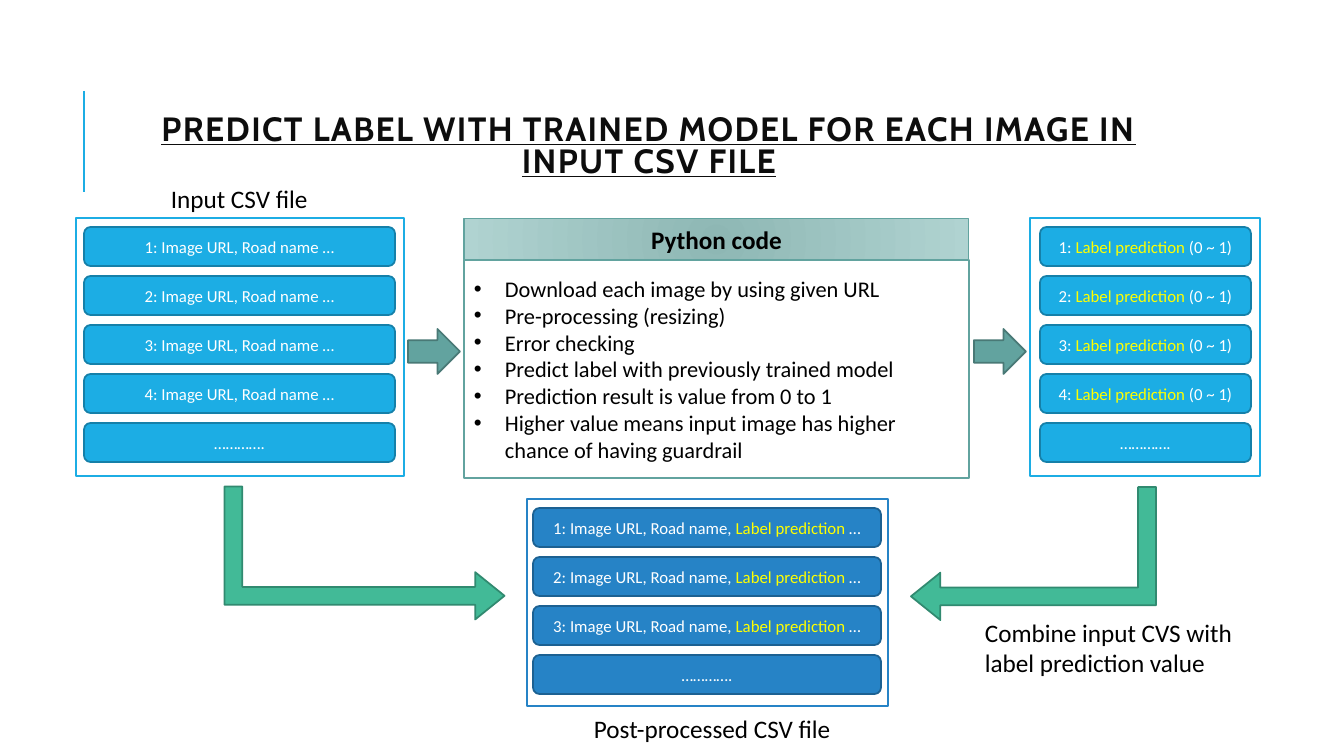
from lxml import etree
from pptx import Presentation
from pptx.dml.color import RGBColor
from pptx.enum.shapes import MSO_CONNECTOR, MSO_SHAPE
from pptx.enum.text import MSO_ANCHOR, PP_ALIGN
from pptx.oxml.ns import qn
from pptx.util import Pt

RECT, ROUND = MSO_SHAPE.RECTANGLE, MSO_SHAPE.ROUNDED_RECTANGLE
ARROW, BENT = MSO_SHAPE.RIGHT_ARROW, MSO_SHAPE.BENT_UP_ARROW
LINE = MSO_CONNECTOR.STRAIGHT
LEFT, CENTER, MIDDLE = PP_ALIGN.LEFT, PP_ALIGN.CENTER, MSO_ANCHOR.MIDDLE

SCALE = 914400 / 100.8
INDENT = 31
COLORS = {
    "white": "FFFFFF", "black": "000000", "ink": "0D0D0D", "yellow": "FFFF00",
    "sky": "1CADE4", "sky_edge": "1580A9", "blue": "2683C6", "blue_edge": "1C6192",
    "teal": "62A39F", "teal_edge": "497976", "green": "42BA97", "green_edge": "318A70",
    "head_in": "8EB7B4", "head_out": "B0D3D1",
}
PITCH = 49
ROW_H = 39
DOTS = [("………….", "white")]
LABEL = ("Label prediction ", "yellow")


def px(n):
    return round(n * SCALE)


def rgb(name):
    return RGBColor.from_string(COLORS[name])


def write(frame, paras, size=18, color="black", font="Calibri", bold=None,
          under=None, align=LEFT, space=None, track=None, bullet=False):
    """Fill a frame; a paragraph is a string or a list of (text, color) parts."""
    for i, parts in enumerate(paras):
        para = frame.paragraphs[0] if i == 0 else frame.add_paragraph()
        para.alignment = align
        if space:
            para.line_spacing = space
        if bullet:
            props = para._p.get_or_add_pPr()
            props.set("marL", str(px(INDENT)))
            props.set("indent", str(-px(INDENT)))
            etree.SubElement(props, qn("a:buFont")).set("typeface", "Arial")
            etree.SubElement(props, qn("a:buChar")).set("char", "•")
        if isinstance(parts, str):
            parts = [(parts, color)]
        for words, tint in parts:
            run = para.add_run()
            run.text = words
            run.font.size, run.font.name = Pt(size), font
            run.font.bold, run.font.underline = bold, under
            run.font.color.rgb = rgb(tint)
            if track:
                run.font._element.set("spc", str(track))


class Board:
    def __init__(self, slide):
        self.slide = slide
        self.shapes = slide.shapes

    def shape(self, kind, box, fill, edge, width=1.25):
        item = self.shapes.add_shape(kind, *map(px, box))
        item.shadow.inherit = False
        item.fill.solid()
        item.fill.fore_color.rgb = rgb(fill)
        item.line.color.rgb = rgb(edge)
        item.line.width = Pt(width)
        item.text_frame.word_wrap = True
        item.text_frame.vertical_anchor = MIDDLE
        return item

    def label(self, box, paras, wrap=False, **style):
        item = self.shapes.add_textbox(*map(px, box))
        item.text_frame.word_wrap = wrap
        write(item.text_frame, paras, **style)
        return item

    def rule(self, x, top, end, color):
        item = self.shapes.add_connector(LINE, px(x), px(top), px(x), px(end))
        item.line.color.rgb = rgb(color)
        item.line.width = Pt(1.5)
        etree.SubElement(item.element.spPr, qn("a:effectLst"))

    def table(self, box, left, wide, rows, tone):
        """A framed stack of record bars."""
        self.shape(RECT, box, "white", tone)
        for i, parts in enumerate(rows):
            bar = (left, box[1] + 9 + i * PITCH, wide, ROW_H)
            item = self.shape(ROUND, bar, tone, tone + "_edge")
            write(item.text_frame, [parts], size=12, align=CENTER)

    def glow(self, item, inner, outer):
        item.fill.gradient()
        for stop, name in zip(item.fill.gradient_stops, (inner, outer)):
            stop.color.rgb = rgb(name)
        grad = item.element.spPr.find(qn("a:gradFill"))
        grad.remove(grad.find(qn("a:lin")))
        path = etree.SubElement(grad, qn("a:path"))
        path.set("path", "circle")
        rect = etree.SubElement(path, qn("a:fillToRect"))
        for side in "ltrb":
            rect.set(side, "100000")

    def bend(self, box, flip=False):
        item = self.shape(BENT, box, "green", "green_edge")
        item.rotation = 90
        for i, ratio in enumerate((0.134, 0.178, 0.221)):
            item.adjustments[i] = ratio
        if flip:
            item.element.spPr.find(qn("a:xfrm")).set("flipV", "1")


def main():
    deck = Presentation()
    deck.slide_width, deck.slide_height = px(1344), px(756)
    board = Board(deck.slides.add_slide(deck.slide_layouts[6]))

    # Title
    board.rule(84, 91, 192, "sky")
    title = board.label(
        (113, 65, 1072, 165),
        ["PREDICT LABEL WITH TRAINED MODEL FOR EACH IMAGE IN INPUT CSV FILE"],
        wrap=True, size=24, color="ink", font="Cabin", bold=True, under=True,
        align=CENTER, space=0.8, track=100)
    title.text_frame.vertical_anchor = MIDDLE

    # Record tables
    source = [[(f"{n}: Image URL, Road name …", "white")] for n in range(1, 5)]
    scores = [[(f"{n}: ", "white"), LABEL, ("(0 ~ 1)", "white")] for n in range(1, 5)]
    merged = [[(f"{n}: Image URL, Road name, ", "white"), LABEL, ("…", "white")]
              for n in range(1, 4)]
    board.table((76, 218, 328, 258), 84, 311, source + [DOTS], "sky")
    board.table((1030, 218, 230, 258), 1040, 211, scores + [DOTS], "sky")
    board.table((527, 499, 361, 207), 533, 348, merged + [DOTS], "blue")

    # Python code panel
    body = board.shape(RECT, (464, 260, 505, 218), "white", "teal")
    write(body.text_frame, [
        "Download each image by using given URL",
        "Pre-processing (resizing)",
        "Error checking",
        "Predict label with previously trained model",
        "Prediction result is value from 0 to 1",
        "Higher value means input image has higher chance of having guardrail",
    ], size=16, bullet=True)
    head = board.shape(RECT, (464, 219, 505, 41), "head_in", "teal", 0.75)
    board.glow(head, "head_in", "head_out")
    write(head.text_frame, ["Python code"], bold=True, align=CENTER)

    # Flow arrows
    for left in (408, 974):
        board.shape(ARROW, (left, 329, 52, 45), "teal", "teal_edge")
    board.bend((298, 413, 133, 280))
    board.bend((967, 431, 133, 245), flip=True)

    # Captions
    board.label((161, 178, 159, 40), ["Input CSV file"])
    board.label((584, 708, 266, 40), ["Post-processed CSV file"])
    board.label((975, 612, 276, 72), ["Combine input CVS with", "label prediction value"])

    deck.save("out.pptx")


if __name__ == "__main__":
    main()
